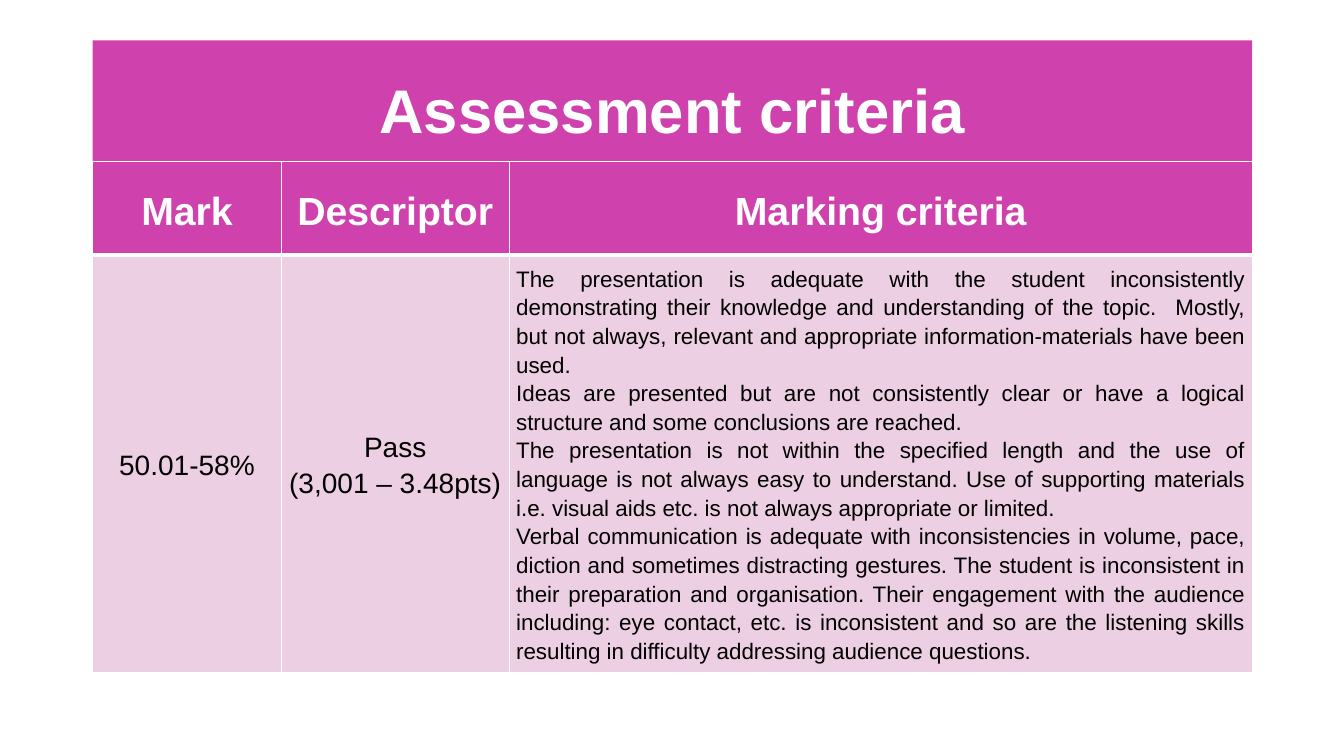
"""Build the assessment criteria slide: a title band above a marking table."""
from lxml import etree
from pptx import Presentation
from pptx import util as u
from pptx.dml.color import RGBColor
from pptx.enum import shapes, text
from pptx.oxml import ns

PX = 9144
MAGENTA = RGBColor(0xCF, 0x41, 0xAD)
PINK = RGBColor(0xED, 0xCF, 0xE3)
WHITE = RGBColor(0xFF, 0xFF, 0xFF)
BLACK = RGBColor(0, 0, 0)
CENTER, JUSTIFY = text.PP_ALIGN.CENTER, text.PP_ALIGN.JUSTIFY

LEFT, WIDTH = 92, 1150
COLUMNS = [187, 226, 737]
ROWS = [93, 414]

HEADINGS = ["Mark", "Descriptor", "Marking criteria"]
CRITERIA = [
    "The presentation is adequate with the student inconsistently demonstrating "
    "their knowledge and understanding of the topic.  Mostly, but not always, "
    "relevant and appropriate information-materials have been used.",
    "Ideas are presented but are not consistently clear or have a logical "
    "structure and some conclusions are reached.",
    "The presentation is not within the specified length and the use of language "
    "is not always easy to understand. Use of supporting materials i.e. visual "
    "aids etc. is not always appropriate or limited.",
    "Verbal communication is adequate with inconsistencies in volume, pace, "
    "diction and sometimes distracting gestures. The student is inconsistent in "
    "their preparation and organisation. Their engagement with the audience "
    "including: eye contact, etc. is inconsistent and so are the listening skills "
    "resulting in difficulty addressing audience questions.",
]
BODY = ["50.01-58%", "Pass\n(3,001 – 3.48pts)", "\n".join(CRITERIA)]


def write(tf, content, size, color, bold, align, spacing):
    tf.text = content
    for p in tf.paragraphs:
        p.alignment = align
        p.line_spacing = spacing
        for r in p.runs:
            r.font.name = "Arial"
            r.font.size = u.Pt(size)
            r.font.bold = bold
            r.font.color.rgb = color


def add_border(cell, side, points):
    tag = ns.qn(f"a:ln{side}")
    ln = etree.SubElement(cell._tc.get_or_add_tcPr(), tag, w=str(u.Pt(points)))
    fill = etree.SubElement(ln, ns.qn("a:solidFill"))
    etree.SubElement(fill, ns.qn("a:srgbClr"), val=str(WHITE))


prs = Presentation()
prs.slide_width, prs.slide_height = 1333 * PX, 750 * PX
s = prs.slides.add_slide(prs.slide_layouts[6])

title = s.shapes.add_shape(
    shapes.MSO_SHAPE.RECTANGLE, LEFT * PX, 40 * PX, WIDTH * PX, 145 * PX)
title.shadow.inherit = False
title.fill.solid()
title.fill.fore_color.rgb = MAGENTA
title.line.fill.background()
title.text_frame.word_wrap = True
title.text_frame.vertical_anchor = text.MSO_ANCHOR.MIDDLE
write(title.text_frame, "Assessment criteria", 44, WHITE, True, CENTER, 0.9)

table = s.shapes.add_table(
    len(ROWS), len(COLUMNS), LEFT * PX, 160 * PX, WIDTH * PX, sum(ROWS) * PX).table
for column, width in zip(table.columns, COLUMNS):
    column.width = width * PX
for row, height in zip(table.rows, ROWS):
    row.height = height * PX

header_style = (MAGENTA, WHITE, True, [28, 28, 28], [CENTER] * 3, (1, 3))
body_style = (PINK, BLACK, False, [20, 20, 16], [CENTER, CENTER, JUSTIFY], (3, 1))
for row, contents, style in zip(table.rows, [HEADINGS, BODY], [header_style, body_style]):
    fill, color, bold, sizes, aligns, (top, bottom) = style
    for cell, content, size, align in zip(row.cells, contents, sizes, aligns):
        write(cell.text_frame, content, size, color, bold, align, 1.15)
        cell.vertical_anchor = text.MSO_ANCHOR.MIDDLE
        cell.margin_left = cell.margin_right = 7 * PX
        cell.margin_top = cell.margin_bottom = 0
        for side, points in zip("LRTB", [1, 1, top, bottom]):
            add_border(cell, side, points)
        cell.fill.solid()
        cell.fill.fore_color.rgb = fill

prs.save("out.pptx")
